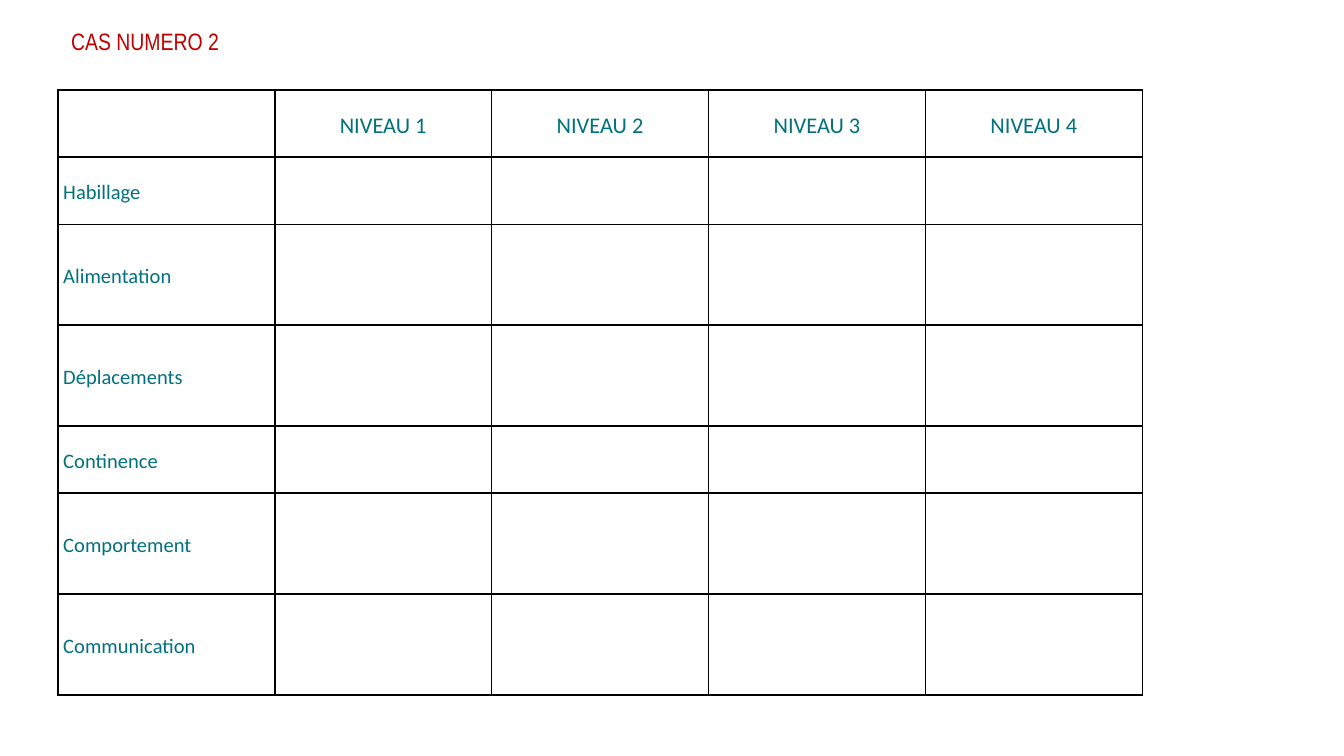
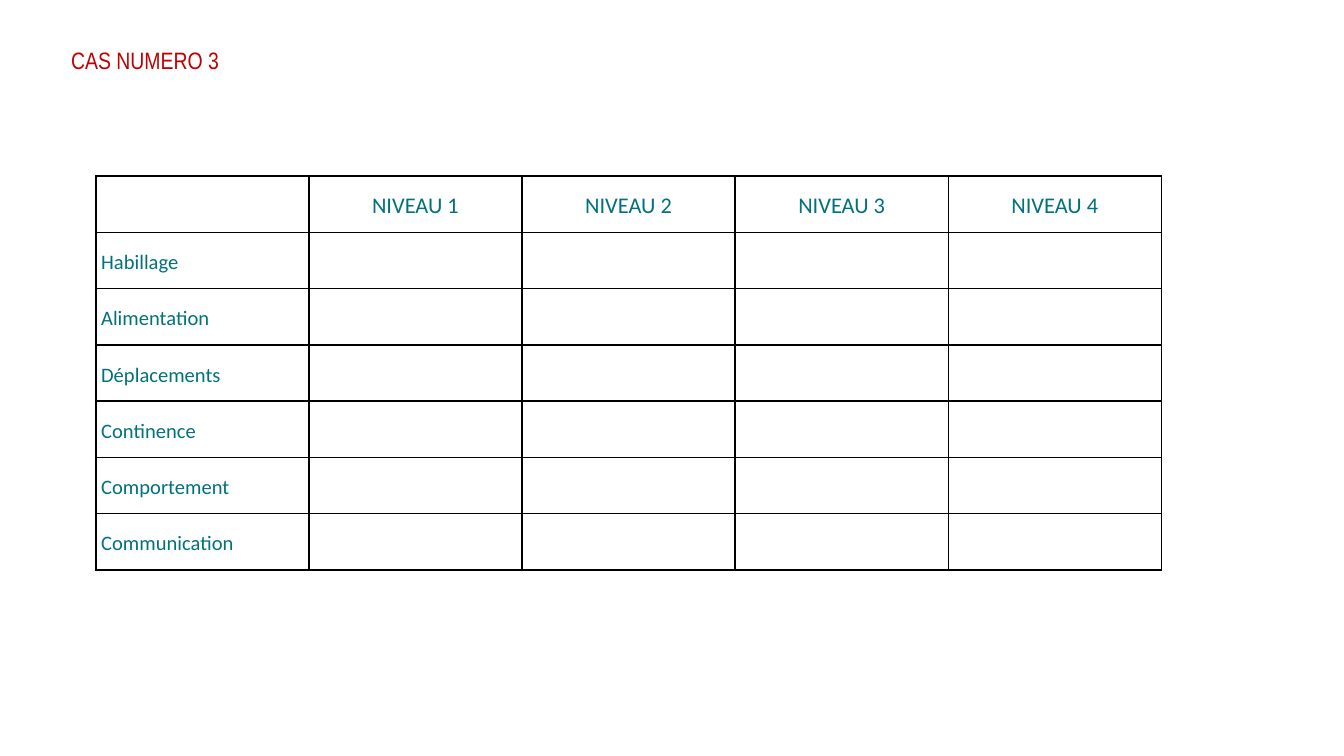
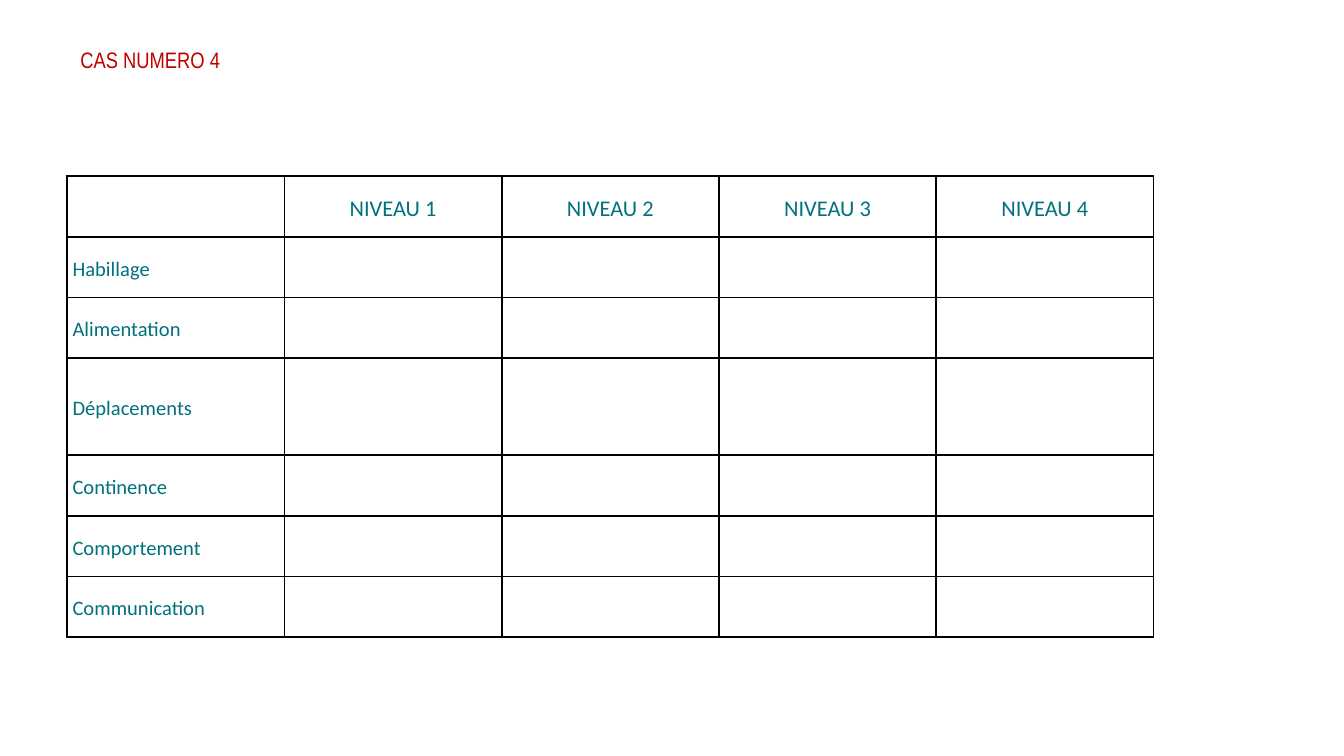
from dataclasses import dataclass

from lxml import etree
from pptx import Presentation
from pptx.dml.color import RGBColor
from pptx.enum.text import MSO_ANCHOR, PP_ALIGN
from pptx.oxml.ns import qn
from pptx.util import Pt

LEFT, CENTER = PP_ALIGN.LEFT, PP_ALIGN.CENTER
TOP, MIDDLE = MSO_ANCHOR.TOP, MSO_ANCHOR.MIDDLE


@dataclass(frozen=True)
class Theme:
    title_color: str = "C00000"
    table_color: str = "00717D"
    border_color: str = "000000"
    title_font: str = "Arial Narrow"
    table_font: str = "Calibri"
    title_size: float = 12.7
    small_title_size: float = 12
    header_size: float = 12
    label_size: float = 11
    border_width: float = 1
    title_inset: float = 7.2
    cell_inset: float = 2.88


THEME = Theme()
LEVELS = [f"NIVEAU {n}" for n in range(1, 5)]
ACTIVITIES = ["Habillage", "Alimentation", "Déplacements",
              "Continence", "Comportement", "Communication"]

CASES = [
    dict(number=2, title_at=(31, 7.2), title_size=THEME.title_size,
         table_at=(31, 48.2), col_width=116.2,
         row_heights=[36, 36, 54, 54, 36, 54, 54]),
    dict(number=3, title_at=(31, 17.3), title_size=THEME.title_size,
         table_at=(51.3, 94.4), col_width=114.2,
         row_heights=[30.15] * 7),
    dict(number=4, title_at=(36, 17.3), title_size=THEME.small_title_size,
         table_at=(36, 94.4), col_width=116.4,
         row_heights=[32.5, 32.5, 32.5, 52, 32.5, 32.5, 32.5]),
]


def write_text(tf, text, *, font, size, color, align=LEFT,
               line_spacing=None, space_after=None):
    p = tf.paragraphs[0]
    p.alignment = align
    if line_spacing is not None:
        p.line_spacing = line_spacing
    if space_after is not None:
        p.space_after = Pt(space_after)
    r = p.add_run()
    r.text = text
    r.font.name = font
    r.font.size = Pt(size)
    r.font.color.rgb = RGBColor.from_string(color)


def add_title(s, text, left, top, size):
    sp = s.shapes.add_textbox(Pt(left), Pt(top), Pt(240.5), Pt(24.5))
    tf = sp.text_frame
    tf.word_wrap = True
    tf.vertical_anchor = TOP
    inset = Pt(THEME.title_inset)
    tf.margin_left = tf.margin_right = tf.margin_top = tf.margin_bottom = inset
    write_text(tf, text, font=THEME.title_font, size=size,
               color=THEME.title_color)


def format_cell(cell):
    cell.vertical_anchor = MIDDLE
    cell.margin_left = cell.margin_right = Pt(THEME.cell_inset)
    cell.margin_top = cell.margin_bottom = 0
    tc_pr = cell._tc.get_or_add_tcPr()
    for side in ("a:lnL", "a:lnR", "a:lnT", "a:lnB"):
        ln = etree.SubElement(tc_pr, qn(side), w=str(Pt(THEME.border_width)))
        fill = etree.SubElement(ln, qn("a:solidFill"))
        etree.SubElement(fill, qn("a:srgbClr"), val=THEME.border_color)
    cell.fill.background()


def write_cell(cell, text, size, align):
    write_text(cell.text_frame, text, font=THEME.table_font, size=size,
               color=THEME.table_color, align=align,
               line_spacing=1.15, space_after=10)


def add_level_table(s, left, top, col_width, row_heights):
    cols = len(LEVELS) + 1
    table = s.shapes.add_table(
        len(row_heights), cols, Pt(left), Pt(top),
        Pt(cols * col_width), Pt(sum(row_heights))).table
    table.first_row = False
    table.horz_banding = False
    for col in table.columns:
        col.width = Pt(col_width)
    for row, height in zip(table.rows, row_heights):
        row.height = Pt(height)
    for cell in table.iter_cells():
        format_cell(cell)
    for i, level in enumerate(LEVELS, 1):
        write_cell(table.cell(0, i), level, THEME.header_size, CENTER)
    for i, activity in enumerate(ACTIVITIES, 1):
        write_cell(table.cell(i, 0), activity, THEME.label_size, LEFT)


def add_case_slide(prs, number, title_at, title_size, table_at, col_width,
                   row_heights):
    s = prs.slides.add_slide(prs.slide_layouts[6])
    add_title(s, f"CAS NUMERO {number}", *title_at, title_size)
    add_level_table(s, *table_at, col_width, row_heights)


def main():
    prs = Presentation()
    prs.slide_width, prs.slide_height = Pt(720), Pt(405)
    for case in CASES:
        add_case_slide(prs, **case)
    prs.save("out.pptx")


if __name__ == "__main__":
    main()
